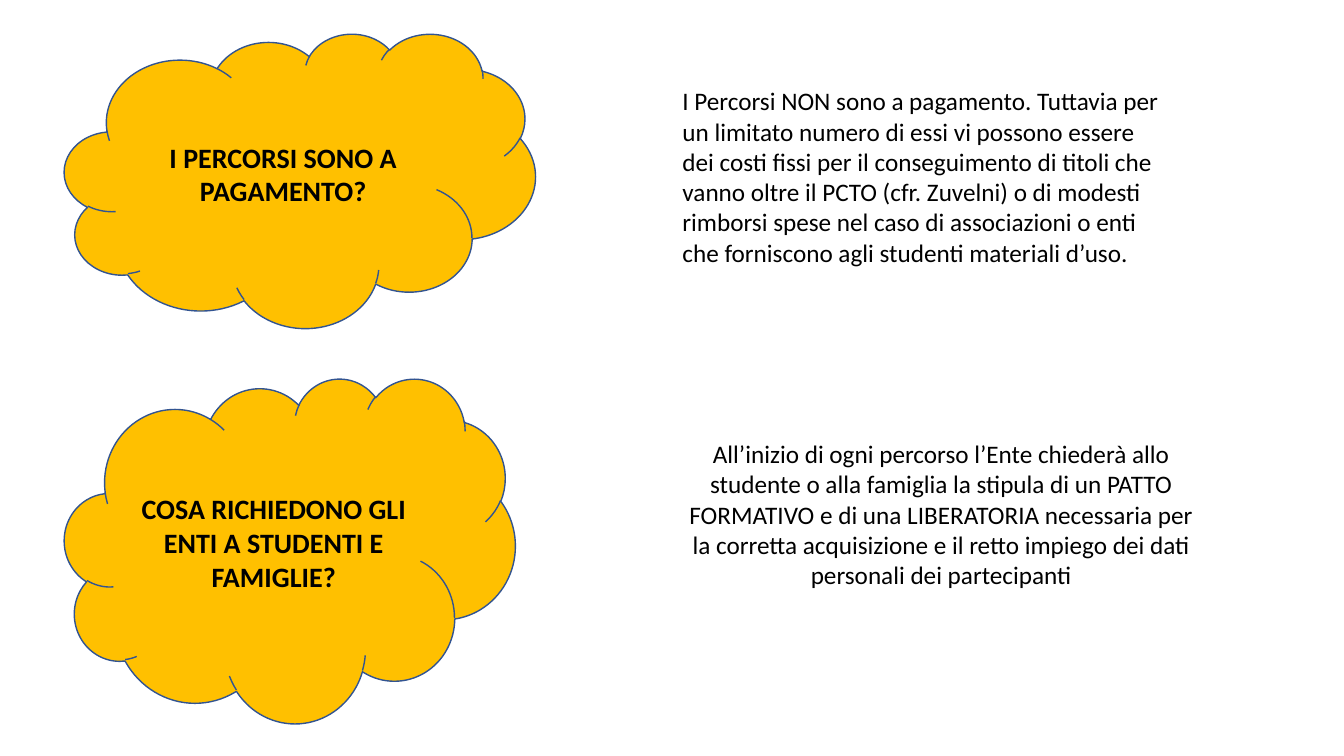
"""Build a slide of two questions in clouds, each with its answer beside it."""
import dataclasses

import pptx
import pptx.dml.color
import pptx.enum.shapes
import pptx.enum.text
import pptx.shapes.autoshape
import pptx.slide
import pptx.text.text
import pptx.util

Inches = pptx.util.Inches
Alignment = pptx.enum.text.PP_ALIGN
Anchor = pptx.enum.text.MSO_ANCHOR

COLORS = {"cloud": "FFC000", "outline": "325491", "text": "000000"}
FONT = "Calibri"
CLOUD_LEFT = 0.64
ANSWER_LEFT = 6.67


@dataclasses.dataclass(frozen=True)
class Block:
    text: str
    top: float
    width: float
    height: float
    alignment: Alignment = Alignment.CENTER


QUESTIONS = [
    Block("I PERCORSI SONO A PAGAMENTO?", 0.33, 4.67, 2.92),
    Block("COSA RICHIEDONO GLI ENTI A STUDENTI E FAMIGLIE?", 3.75, 4.47, 3.42),
]
ANSWERS = [
    Block(
        "I Percorsi NON sono a pagamento. Tuttavia per un limitato numero di essi "
        "vi possono essere dei costi fissi per il conseguimento di titoli che vanno "
        "oltre il PCTO (cfr. Zuvelni) o di modesti rimborsi spese nel caso di "
        "associazioni o enti che forniscono agli studenti materiali d’uso.",
        0.8, 4.98, 1.92, Alignment.LEFT,
    ),
    Block(
        "All’inizio di ogni percorso l’Ente chiederà allo studente o alla famiglia "
        "la stipula di un PATTO FORMATIVO e di una LIBERATORIA necessaria per la "
        "corretta acquisizione e il retto impiego dei dati personali dei partecipanti",
        4.3, 5.33, 1.62,
    ),
]


def color(name: str) -> pptx.dml.color.RGBColor:
    return pptx.dml.color.RGBColor.from_string(COLORS[name])


def write_text(
    shape: pptx.shapes.autoshape.Shape,
    text: str,
    *,
    size: int,
    alignment: Alignment,
    anchor: Anchor = Anchor.TOP,
    bold: bool = False,
) -> None:
    frame = shape.text_frame
    frame.word_wrap = True
    frame.vertical_anchor = anchor
    paragraph = frame.paragraphs[0]
    paragraph.alignment = alignment
    run = paragraph.add_run()
    run.text = text
    run.font.name = FONT
    run.font.size = pptx.util.Pt(size)
    run.font.bold = bold
    run.font.color.rgb = color("text")


def add_question(slide: pptx.slide.Slide, question: Block) -> None:
    cloud = slide.shapes.add_shape(
        pptx.enum.shapes.MSO_SHAPE.CLOUD,
        Inches(CLOUD_LEFT), Inches(question.top),
        Inches(question.width), Inches(question.height),
    )
    cloud.shadow.inherit = False
    cloud.fill.solid()
    cloud.fill.fore_color.rgb = color("cloud")
    cloud.line.color.rgb = color("outline")
    cloud.line.width = pptx.util.Pt(1)
    write_text(cloud, question.text, size=20, alignment=question.alignment,
               anchor=Anchor.MIDDLE, bold=True)


def add_answer(slide: pptx.slide.Slide, answer: Block) -> None:
    box = slide.shapes.add_textbox(
        Inches(ANSWER_LEFT), Inches(answer.top),
        Inches(answer.width), Inches(answer.height),
    )
    write_text(box, answer.text, size=18, alignment=answer.alignment)
    box.text_frame.auto_size = pptx.enum.text.MSO_AUTO_SIZE.SHAPE_TO_FIT_TEXT


def main() -> None:
    presentation = pptx.Presentation()
    presentation.slide_width = Inches(13.33)
    presentation.slide_height = Inches(7.5)
    slide = presentation.slides.add_slide(presentation.slide_layouts[6])
    for question, answer in zip(QUESTIONS, ANSWERS):
        add_question(slide, question)
        add_answer(slide, answer)
    presentation.save("out.pptx")


if __name__ == "__main__":
    main()
